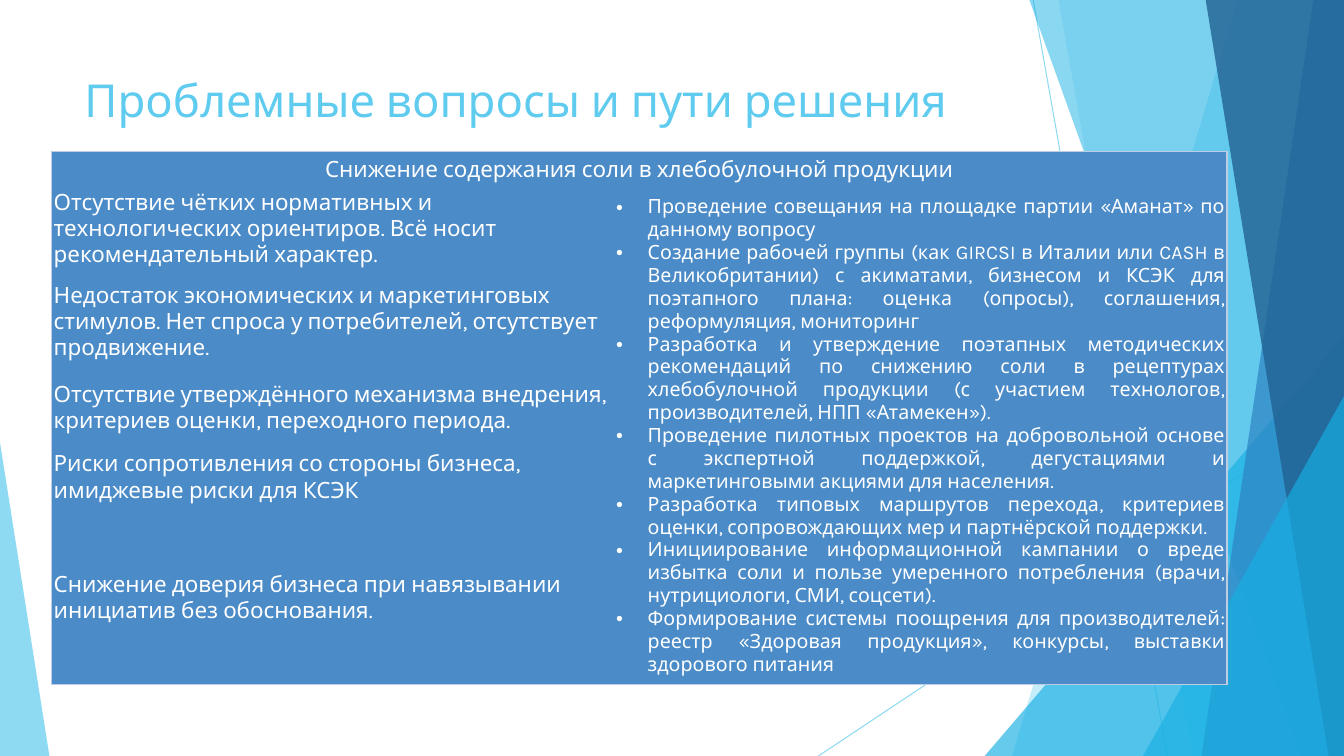
from dataclasses import dataclass

from lxml.etree import SubElement as Sub
from pptx import Presentation
from pptx.dml.color import RGBColor as Rgb
from pptx.enum.shapes import MSO_CONNECTOR as Conn, MSO_SHAPE as Kind
from pptx.enum.text import MSO_ANCHOR as Anchor, PP_ALIGN as Align
from pptx.oxml.ns import qn
from pptx.util import Pt


@dataclass(frozen=True)
class Theme:
    font: str = "Karla"
    sky: str = "5FCBEF"
    cyan: str = "17B0E4"
    blue: str = "2E83C3"
    navy: str = "226292"
    cell: str = "4A8BC8"
    edge: str = "BECDE4"
    white: str = "FFFFFF"
    title: float = 32.4
    body: float = 16
    small: float = 14


THEME = Theme()
WIDE, HIGH = 960, 540
TOP = -0.6

# Wording
TITLE = "Проблемные вопросы и пути решения"
HEAD = "Снижение содержания соли в хлебобулочной продукции"
ISSUES = [
    "Отсутствие чётких нормативных и технологических ориентиров. "
    "Всё носит рекомендательный характер.",
    "Недостаток экономических и маркетинговых стимулов. "
    "Нет спроса у потребителей, отсутствует продвижение.",
    "Отсутствие утверждённого механизма внедрения, критериев оценки, "
    "переходного периода.",
    "Риски сопротивления со стороны бизнеса, имиджевые риски для КСЭК",
    "Снижение доверия бизнеса при навязывании инициатив без обоснования.",
]
STEPS = [
    "Проведение совещания на площадке партии «Аманат» по данному вопросу",
    "Создание рабочей группы (как GIRCSI в Италии или CASH в Великобритании) "
    "с акиматами, бизнесом и КСЭК для поэтапного плана: оценка (опросы), "
    "соглашения, реформуляция, мониторинг",
    "Разработка и утверждение поэтапных методических рекомендаций по снижению "
    "соли в рецептурах хлебобулочной продукции (с участием технологов, "
    "производителей, НПП «Атамекен»).",
    "Проведение пилотных проектов на добровольной основе с экспертной "
    "поддержкой, дегустациями и маркетинговыми акциями для населения.",
    "Разработка типовых маршрутов перехода, критериев оценки, "
    "сопровождающих мер и партнёрской поддержки.",
    "Инициирование информационной кампании о вреде избытка соли и пользе "
    "умеренного потребления (врачи, нутрициологи, СМИ, соцсети).",
    "Формирование системы поощрения для производителей: реестр «Здоровая "
    "продукция», конкурсы, выставки здорового питания",
]
ROWS = [26, 49.7, 73.4, 49.7, 49.7, 91.4]
COLS = [401.8, 437.8]


def fade(node, alpha):
    """Set the opacity, in percent, of the colour inside node."""
    color = next(node.iter(qn("a:srgbClr")))
    Sub(color, qn("a:alpha"), val=str(alpha * 1000))


def paint(shape, color, alpha):
    shape.shadow.inherit = False
    shape.fill.solid()
    shape.fill.fore_color.rgb = Rgb.from_string(color)
    shape.line.fill.background()
    fade(shape.element.spPr, alpha)


def add_line(slide, x1, y1, x2, y2):
    line = slide.shapes.add_connector(Conn.STRAIGHT, Pt(x1), Pt(y1), Pt(x2), Pt(y2))
    line.line.width = Pt(0.75)
    line.line.color.rgb = Rgb.from_string(THEME.sky)
    props = line._element.spPr
    fade(props, 70)
    Sub(props, qn("a:effectLst"))


def add_band(slide, upper, lower, color, alpha):
    """Fill the slide from a slanted left edge to its right side."""
    spots = [(WIDE, TOP), (WIDE, HIGH), (lower, HIGH)]
    pen = slide.shapes.build_freeform(Pt(upper), Pt(TOP), scale=1.0)
    pen.add_line_segments([(Pt(x), Pt(y)) for x, y in spots], close=True)
    paint(pen.convert_to_shape(), color, alpha)


def add_wedge(slide, left, top, width, tip, color, alpha):
    """Stand a triangle on the bottom of the slide."""
    wedge = slide.shapes.add_shape(
        Kind.ISOSCELES_TRIANGLE, Pt(left), Pt(top), Pt(width), Pt(HIGH - top))
    wedge.adjustments[0] = tip
    paint(wedge, color, alpha)


def add_run(para, text, size, color):
    run = para.add_run()
    run.text = text
    run.font.name = THEME.font
    run.font.size = Pt(size)
    run.font.color.rgb = Rgb.from_string(color)


def add_title(slide):
    box = slide.shapes.add_textbox(Pt(53.3), Pt(48.2), Pt(676.8), Pt(37.4))
    frame = box.text_frame
    frame.word_wrap = True
    frame.vertical_anchor = Anchor.TOP
    add_run(frame.paragraphs[0], TITLE, THEME.title, THEME.sky)


def add_bullet(para):
    props = para._p.get_or_add_pPr()
    props.set("marL", str(Pt(22.5)))
    props.set("indent", str(-Pt(22.5)))
    Sub(props, qn("a:buFont"), typeface="Arial")
    Sub(props, qn("a:buChar"), char="•")


def fill_cell(cell, texts, size, align=Align.LEFT, dots=False):
    frame = cell.text_frame
    for num, text in enumerate(texts):
        para = frame.add_paragraph() if num else frame.paragraphs[0]
        para.alignment = align
        if dots:
            add_bullet(para)
        add_run(para, text, size, THEME.white)


def style_cell(cell, row, col):
    """Fill a cell and rule only the outer edges of the table."""
    cell.vertical_anchor = Anchor.MIDDLE
    cell.margin_left = cell.margin_right = Pt(1.5)
    cell.margin_top = cell.margin_bottom = Pt(0.75)
    outer = {
        "L": col == 0,
        "R": col + cell.span_width == len(COLS),
        "T": row == 0,
        "B": row + cell.span_height == len(ROWS),
    }
    props = cell._tc.get_or_add_tcPr()
    for side, shown in outer.items():
        line = Sub(props, qn(f"a:ln{side}"), w=str(Pt(1)))
        if shown:
            Sub(Sub(line, qn("a:solidFill")), qn("a:srgbClr"), val=THEME.edge)
        else:
            Sub(line, qn("a:noFill"))
    cell.fill.solid()
    cell.fill.fore_color.rgb = Rgb.from_string(THEME.cell)


def add_grid(slide):
    grid = slide.shapes.add_table(
        len(ROWS), len(COLS), Pt(36.9), Pt(108.2), Pt(sum(COLS)), Pt(sum(ROWS))).table
    grid.first_row = grid.horz_banding = False
    for col, width in zip(grid.columns, COLS):
        col.width = Pt(width)
    for row, height in zip(grid.rows, ROWS):
        row.height = Pt(height)
    grid.cell(0, 0).merge(grid.cell(0, 1))
    grid.cell(1, 1).merge(grid.cell(len(ROWS) - 1, 1))
    for row in range(len(ROWS)):
        for col in range(len(COLS)):
            style_cell(grid.cell(row, col), row, col)
    fill_cell(grid.cell(0, 0), [HEAD], THEME.body, Align.CENTER)
    for row, issue in enumerate(ISSUES, 1):
        fill_cell(grid.cell(row, 0), [issue], THEME.body)
    fill_cell(grid.cell(1, 1), STEPS, THEME.small, Align.JUSTIFY, dots=True)


def main():
    deck = Presentation()
    deck.slide_width, deck.slide_height = Pt(WIDE), Pt(HIGH)
    slide = deck.slides.add_slide(deck.slide_layouts[6])

    # Backdrop, from back to front
    add_line(slide, 738, 0, 833.8, HIGH)
    add_line(slide, WIDE, 290.2, 584.6, HIGH)
    add_band(slide, 884.2, 722.9, THEME.sky, 36)
    add_band(slide, 756, 851.8, THEME.sky, 20)
    add_wedge(slide, 703.4, 239.8, 256.6, 1, THEME.cyan, 66)
    add_band(slide, 735.1, 929.5, THEME.cyan, 50)
    add_band(slide, 938.2, 858.2, THEME.blue, 70)
    add_band(slide, 861.1, 949, THEME.navy, 80)
    add_wedge(slide, 816.5, 283, 143.5, 1, THEME.cyan, 66)
    add_wedge(slide, 0, 316.1, 35.3, 0, THEME.sky, 70)

    # Content
    add_title(slide)
    add_grid(slide)
    deck.save("out.pptx")


if __name__ == "__main__":
    main()
